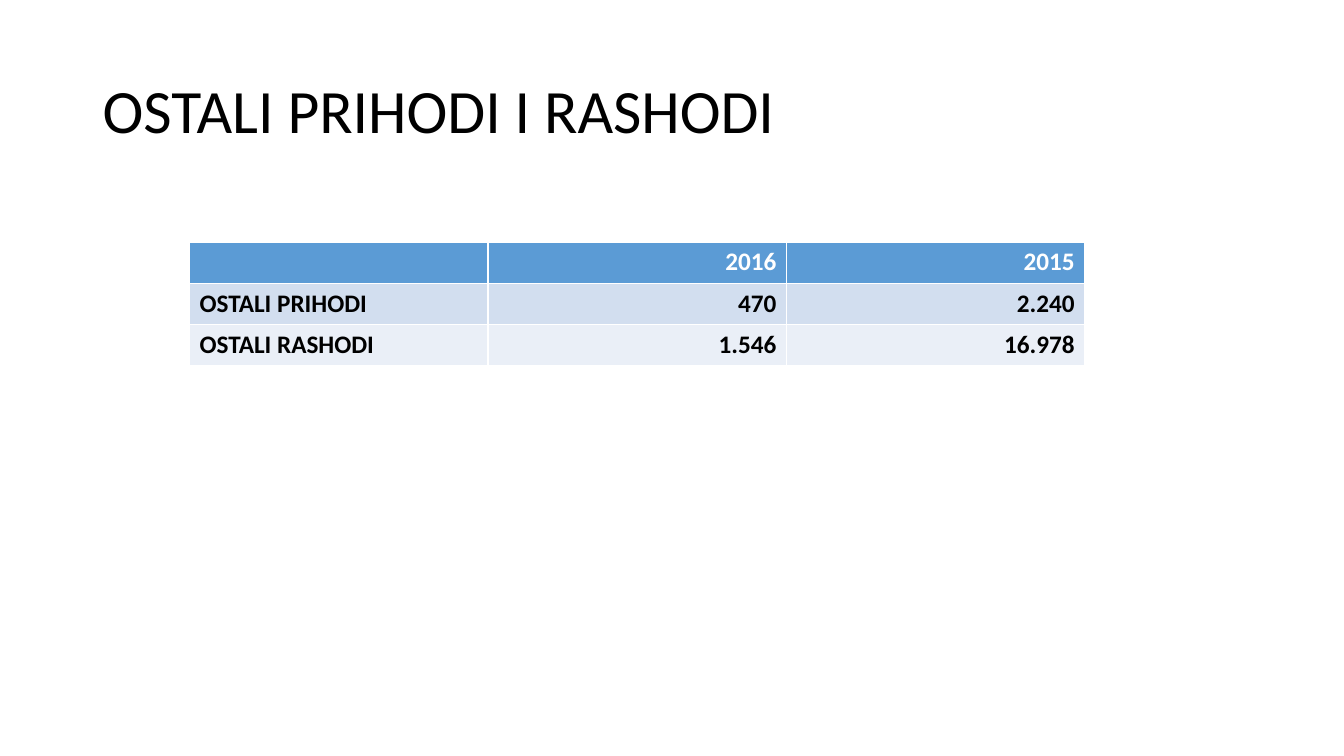
from pptx import Presentation
from pptx.dml.color import RGBColor
from pptx.enum.text import MSO_ANCHOR, PP_ALIGN
from pptx.util import Inches, Pt

MIDDLE = MSO_ANCHOR.MIDDLE
LEFT, RIGHT = PP_ALIGN.LEFT, PP_ALIGN.RIGHT
FONT = "Calibri"
COLORS = {
    "text": "000000",
    "header_text": "FFFFFF",
    "header": "5B9BD5",
    "odd_row": "D2DEEF",
    "even_row": "EAEFF7",
}
COL_W, ROW_H = 2.96, 0.41
ROWS = [
    ["", "2016", "2015"],
    ["OSTALI PRIHODI", "470", "2.240"],
    ["OSTALI RASHODI", "1.546", "16.978"],
]


def color(name):
    return RGBColor.from_string(COLORS[name])


def style(p, size, color_name, bold=False, align=LEFT):
    p.alignment = align
    p.font.name = FONT
    p.font.size = Pt(size)
    p.font.bold = bold
    p.font.color.rgb = color(color_name)


def add_title(s, text, left, top, width, height):
    sp = s.shapes.add_textbox(*map(Inches, (left, top, width, height)))
    tf = sp.text_frame
    tf.word_wrap = True
    tf.vertical_anchor = MIDDLE
    p = tf.paragraphs[0]
    p.text = text
    p.line_spacing = 0.9
    style(p, 44, "text")


def fill_cell(cell, text, row, col):
    fills = ("even_row", "odd_row")
    cell.fill.solid()
    cell.fill.fore_color.rgb = color(fills[row % 2] if row else "header")
    cell.text = text
    style(cell.text_frame.paragraphs[0], 18, "text" if row else "header_text",
          bold=True, align=RIGHT if col else LEFT)


def add_grid(s, rows, left, top):
    n_rows, n_cols = len(rows), len(rows[0])
    table = s.shapes.add_table(
        n_rows, n_cols, Inches(left), Inches(top),
        Inches(n_cols * COL_W), Inches(n_rows * ROW_H)).table
    for i, row in enumerate(rows):
        for j, text in enumerate(row):
            fill_cell(table.cell(i, j), text, i, j)


def main():
    prs = Presentation()
    prs.slide_width, prs.slide_height = Inches(13.33), Inches(7.5)
    s = prs.slides.add_slide(prs.slide_layouts[6])
    add_title(s, "OSTALI PRIHODI I RASHODI", 0.92, 0.4, 11.5, 1.45)
    add_grid(s, ROWS, 1.88, 2.4)
    prs.save("out.pptx")


if __name__ == "__main__":
    main()
